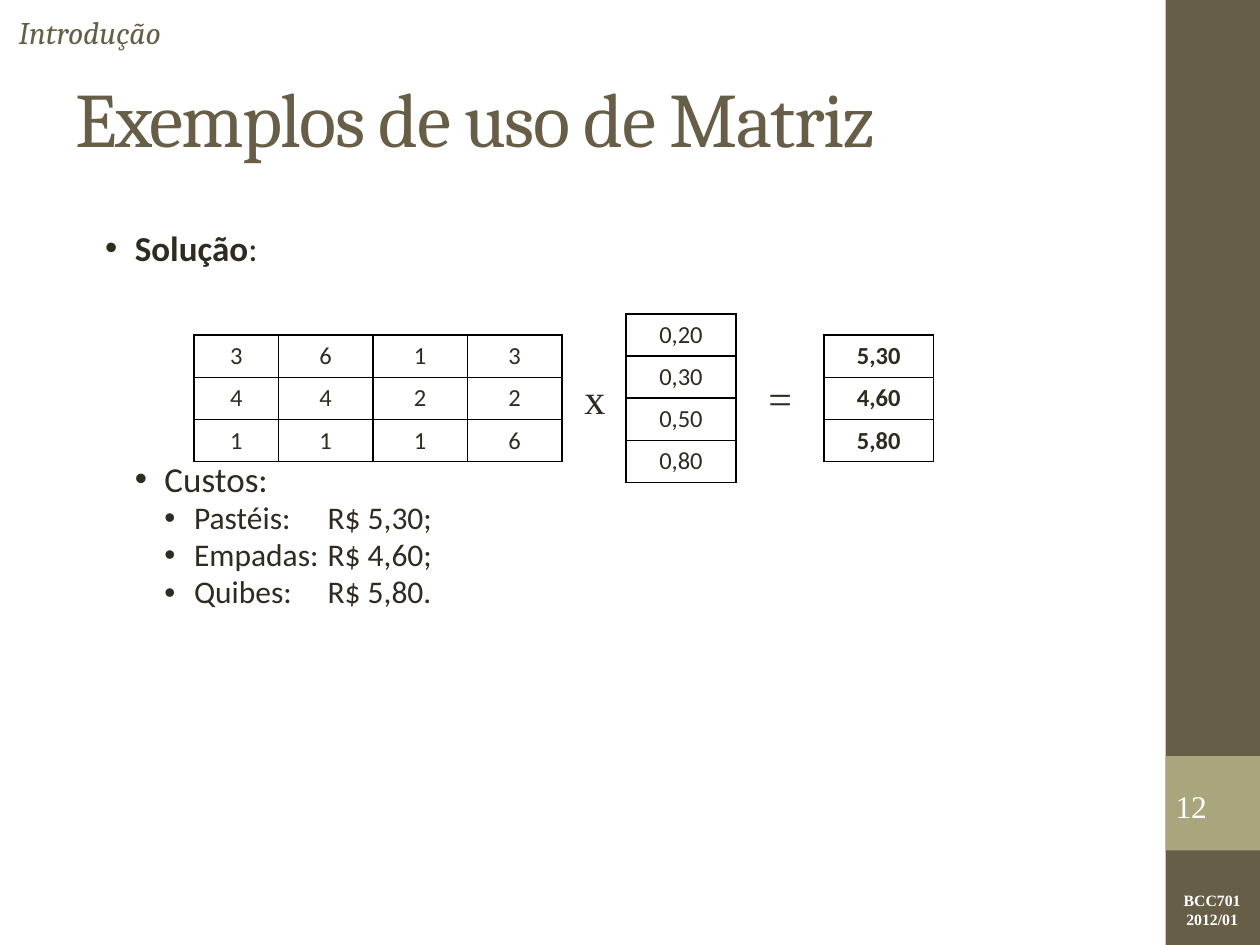
from dataclasses import dataclass

import pptx
import pptx.dml.color
import pptx.enum.shapes
import pptx.enum.text
import pptx.oxml
import pptx.oxml.ns
import pptx.util
from pptx.util import Inches

COLORS = {
    "olive": "675E47",
    "sage": "A9A57C",
    "ink": "2F2B20",
    "white": "FFFFFF",
    "border": "000000",
}
ALIGN = pptx.enum.text.PP_ALIGN
ANCHOR = pptx.enum.text.MSO_ANCHOR
ROW_HEIGHT = 0.335


@dataclass
class Band:
    top: float
    height: float
    color: str


@dataclass
class Label:
    text: str
    box: tuple
    style: dict
    align: ALIGN = ALIGN.LEFT
    anchor: ANCHOR = ANCHOR.TOP
    inset: tuple = (0.1, 0.05)
    wrap: bool = True


@dataclass
class Matrix:
    left: float
    top: float
    widths: list
    rows: list
    bold: bool = False


@dataclass
class Item:
    level: int
    runs: list
    size: int
    before: float = 0
    spacing: float = 1.0


BANDS = [Band(0, 7.5, "olive"), Band(6, 0.75, "sage")]

OPERATOR = dict(font="Times New Roman", size=24)
LABELS = [
    Label("BCC701\n2012/01", (9.26, 7.02, 0.72, 0.4),
          dict(font="Times New Roman", size=9, color="white", bold=True), align=ALIGN.CENTER),
    Label("12", (9.33, 6.18, 0.6, 0.43),
          dict(font="Times New Roman", size=18, color="white"), anchor=ANCHOR.MIDDLE, inset=(0, 0)),
    Label("Introdução", (0.05, 0.08, 8.32, 0.34),
          dict(font="Cambria", size=18, color="olive", italic=True), anchor=ANCHOR.MIDDLE),
    Label("x", (4.54, 2.91, 0.36, 0.5), OPERATOR, wrap=False),
    Label("=", (6, 2.91, 0.39, 0.5), OPERATOR, wrap=False),
]

MATRICES = [
    Matrix(1.54, 2.66, [0.67, 0.75, 0.75, 0.75], ["3 6 1 3", "4 4 2 2", "1 1 1 6"]),
    Matrix(4.97, 2.49, [0.87], ["0,20", "0,30", "0,50", "0,80"]),
    Matrix(6.54, 2.66, [0.87], ["5,30", "4,60", "5,80"], bold=True),
]

ITEMS = [
    Item(1, [("Solução", True), (":", False)], 20),
    Item(2, [("Custos:", False)], 20, before=108),
] + [
    Item(3, [(f"{name}: \tR$ {cost}", False)], 18, spacing=0.98)
    for name, cost in [("Pastéis", "5,30;"), ("Empadas", "4,60;"), ("Quibes", "5,80.")]
]


def rgb(name: str):
    return pptx.dml.color.RGBColor.from_string(COLORS[name])


def add_text(p, text: str, *, font="Calibri", size=14, color="ink", bold=False, italic=False):
    r = p.add_run()
    r.text = text
    r.font.name = font
    r.font.size = pptx.util.Pt(size)
    r.font.color.rgb = rgb(color)
    r.font.bold = bold
    r.font.italic = italic
    return r


def place(sp, box: tuple) -> None:
    sp.left, sp.top, sp.width, sp.height = map(Inches, box)


def add_band(s, band: Band) -> None:
    sp = s.shapes.add_shape(pptx.enum.shapes.MSO_SHAPE.RECTANGLE, Inches(9.25),
                            Inches(band.top), Inches(0.75), Inches(band.height))
    sp.shadow.inherit = False
    sp.fill.solid()
    sp.fill.fore_color.rgb = rgb(band.color)
    sp.line.fill.background()


def add_label(s, label: Label) -> None:
    tf = s.shapes.add_textbox(*map(Inches, label.box)).text_frame
    tf.word_wrap = label.wrap
    tf.vertical_anchor = label.anchor
    tf.margin_left = tf.margin_right = Inches(label.inset[0])
    tf.margin_top = tf.margin_bottom = Inches(label.inset[1])
    for i, line in enumerate(label.text.split("\n")):
        p = tf.add_paragraph() if i else tf.paragraphs[0]
        p.alignment = label.align
        add_text(p, line, **label.style)


def add_borders(cell) -> None:
    props = cell._tc.get_or_add_tcPr()
    for i, side in enumerate(("lnL", "lnR", "lnT", "lnB")):
        props.insert(i, pptx.oxml.parse_xml(
            f'<a:{side} {pptx.oxml.ns.nsdecls("a")} w="12700"><a:solidFill>'
            f'<a:srgbClr val="{COLORS["border"]}"/></a:solidFill></a:{side}>'))


def add_matrix(s, matrix: Matrix) -> None:
    n = len(matrix.rows)
    table = s.shapes.add_table(n, len(matrix.widths), Inches(matrix.left), Inches(matrix.top),
                               Inches(sum(matrix.widths)), Inches(n * ROW_HEIGHT)).table
    table.first_row = table.horz_banding = False
    for column, width in zip(table.columns, matrix.widths):
        column.width = Inches(width)
    for i, row in enumerate(matrix.rows):
        for j, value in enumerate(row.split()):
            cell = table.cell(i, j)
            cell.fill.background()
            add_borders(cell)
            p = cell.text_frame.paragraphs[0]
            p.alignment = ALIGN.CENTER
            add_text(p, value, bold=matrix.bold)


def add_item(p, item: Item) -> None:
    props = p._p.get_or_add_pPr()
    props.set("marL", str(Inches(0.235 * (item.level + 1))))
    props.set("indent", str(-Inches(0.235)))
    p.level = item.level
    p.alignment = ALIGN.LEFT
    p.space_before = pptx.util.Pt(item.before)
    p.space_after = pptx.util.Pt(0)
    p.line_spacing = item.spacing
    for tag, name, value in (("buFont", "typeface", "Arial"), ("buChar", "char", "•")):
        props.append(pptx.oxml.parse_xml(
            f'<a:{tag} {pptx.oxml.ns.nsdecls("a")} {name}="{value}"/>'))
    for text, bold in item.runs:
        add_text(p, text, size=item.size, bold=bold)


def main() -> None:
    prs = pptx.Presentation()
    prs.slide_width, prs.slide_height = Inches(10), Inches(7.5)
    s = prs.slides.add_slide(prs.slide_layouts[1])
    title, body = s.placeholders

    place(title, (0.5, 0.3, 8.33, 1.25))
    title.text_frame.vertical_anchor = ANCHOR.MIDDLE
    p = title.text_frame.paragraphs[0]
    p.alignment = ALIGN.LEFT
    r = add_text(p, "Exemplos de uso de Matriz", font="Cambria", size=44, color="olive")
    r.font._element.set("spc", "-100")

    place(body, (0.5, 1.75, 8.33, 5.25))
    tf = body.text_frame
    for i, item in enumerate(ITEMS):
        add_item(tf.add_paragraph() if i else tf.paragraphs[0], item)

    for band in BANDS:
        add_band(s, band)
    for label in LABELS:
        add_label(s, label)
    for matrix in MATRICES:
        add_matrix(s, matrix)
    prs.save("out.pptx")


if __name__ == "__main__":
    main()
